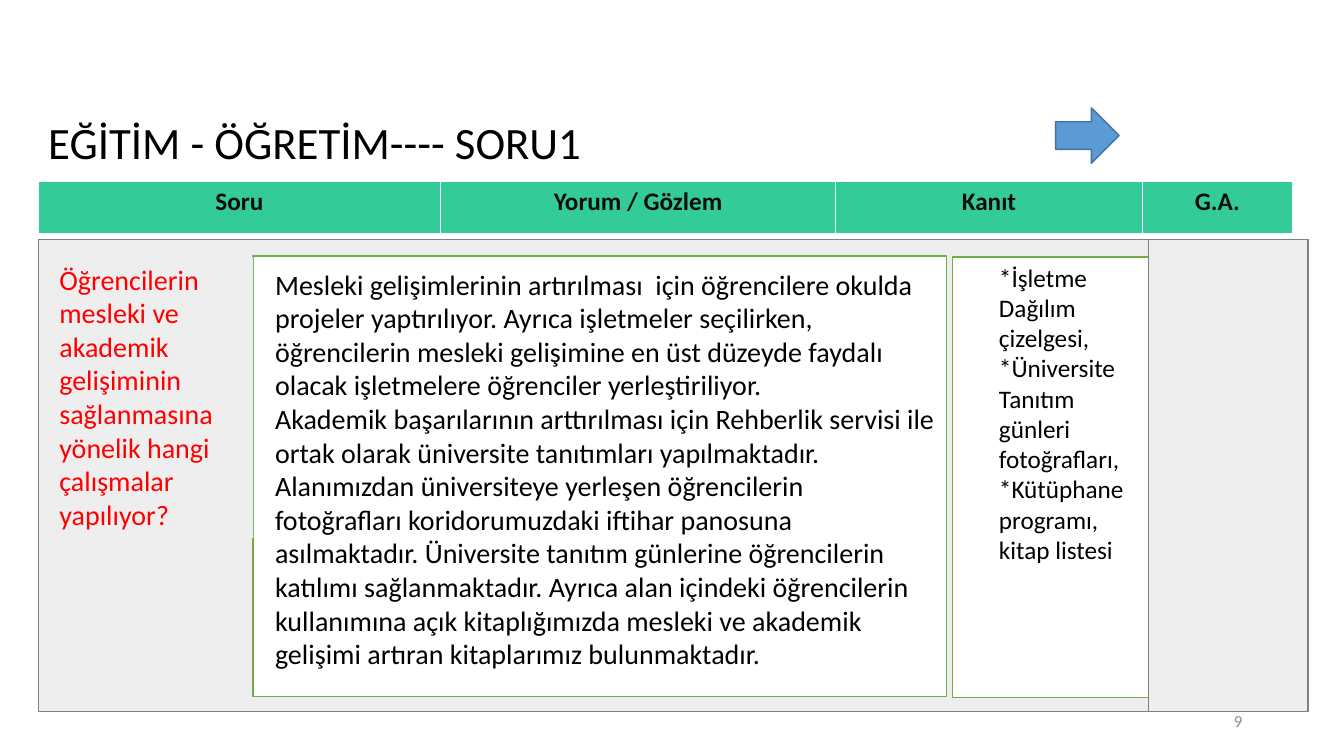
from lxml import etree
from pptx import Presentation
from pptx.dml.color import RGBColor
from pptx.enum.shapes import MSO_SHAPE
from pptx.enum.text import MSO_ANCHOR, PP_ALIGN
from pptx.oxml.ns import qn
from pptx.util import Inches, Pt

RECTANGLE, ARROW = MSO_SHAPE.RECTANGLE, MSO_SHAPE.RIGHT_ARROW
TOP, MIDDLE = MSO_ANCHOR.TOP, MSO_ANCHOR.MIDDLE
LEFT, CENTER, RIGHT = PP_ALIGN.LEFT, PP_ALIGN.CENTER, PP_ALIGN.RIGHT

FONT = "Calibri"
BLACK, WHITE, RED = "000000", "FFFFFF", "FF0000"
PANEL, GRAY, GREEN = "EEEEEE", "808080", "70AD47"


def rgb(value):
    return RGBColor.from_string(value)


class SlideBuilder:
    def __init__(self, slide, font):
        self.slide = slide
        self.font = font

    def fill_text(self, frame, paragraphs, size, color, align=LEFT, bold=False,
                  spacing=None):
        frame.text = "\n".join(paragraphs)
        for paragraph in frame.paragraphs:
            paragraph.alignment = align
            if spacing:
                paragraph.line_spacing = spacing
            for run in paragraph.runs:
                run.font.name = self.font
                run.font.size = Pt(size)
                run.font.bold = bold
                run.font.color.rgb = rgb(color)

    def shape(self, box, fill, line=None, width=1, kind=RECTANGLE):
        shape = self.slide.shapes.add_shape(kind, *map(Inches, box))
        shape.shadow.inherit = False
        shape.fill.solid()
        shape.fill.fore_color.rgb = rgb(fill)
        if line:
            shape.line.color.rgb = rgb(line)
            shape.line.width = Pt(width)
        else:
            shape.line.fill.background()

    def text(self, box, paragraphs, size, color, anchor=TOP, fill=None, **style):
        text_box = self.slide.shapes.add_textbox(*map(Inches, box))
        if fill:
            text_box.fill.solid()
            text_box.fill.fore_color.rgb = rgb(fill)
        frame = text_box.text_frame
        frame.word_wrap = True
        frame.vertical_anchor = anchor
        self.fill_text(frame, paragraphs, size, color, **style)

    def border(self, side, width, color):
        line = etree.Element(qn("a:ln" + side), w=str(Pt(width)))
        fill = etree.SubElement(line, qn("a:solidFill"))
        etree.SubElement(fill, qn("a:srgbClr"), val=color)
        return line

    def header_table(self, box, labels, widths, fill, color, size):
        table = self.slide.shapes.add_table(
            1, len(labels), *map(Inches, box)).table
        for index, (label, width) in enumerate(zip(labels, widths)):
            table.columns[index].width = Inches(width)
            cell = table.cell(0, index)
            cell.fill.solid()
            cell.fill.fore_color.rgb = rgb(fill)
            self.fill_text(cell.text_frame, [label], size, color, CENTER, True)
            properties = cell._tc.get_or_add_tcPr()
            for position, side in enumerate("LRTB"):
                line = self.border(side, 3 if side == "B" else 1, WHITE)
                properties.insert(position, line)


def main():
    presentation = Presentation()
    presentation.slide_width = Inches(13.33)
    presentation.slide_height = Inches(7.5)
    slide = presentation.slides.add_slide(presentation.slide_layouts[6])
    builder = SlideBuilder(slide, FONT)

    # Background panel and observation frame
    builder.shape((0.38, 2.38, 12.6, 4.68), PANEL, GRAY, 0.75)
    builder.shape((2.51, 2.54, 6.88, 4.37), WHITE, GREEN)

    # Title and page number
    builder.text((0.38, 1.15, 9.93, 0.57), ["EĞİTİM - ÖĞRETİM---- SORU1"],
                 32, BLACK, MIDDLE, spacing=0.9)
    builder.text((9.42, 6.95, 3, 0.4), ["9"], 12, "8C8C8C", MIDDLE, align=RIGHT)

    # Column headings
    builder.header_table((0.38, 1.8, 12.44, 0.53),
                         ["Soru", "Yorum / Gözlem", "Kanıt", "G.A."],
                         [3.99, 3.92, 3.04, 1.49], "33CC99", "0D0D0D", 18)

    # Question
    builder.text((0.49, 2.55, 2.02, 2.79), [
        "Öğrencilerin mesleki ve akademik gelişiminin sağlanmasına yönelik "
        "hangi çalışmalar yapılıyor?"], 20, RED, fill=PANEL)

    # Observation
    builder.text((2.63, 2.6, 6.76, 4.14), [
        "Mesleki gelişimlerinin artırılması  için öğrencilere okulda projeler "
        "yaptırılıyor. Ayrıca işletmeler seçilirken, öğrencilerin mesleki "
        "gelişimine en üst düzeyde faydalı olacak işletmelere öğrenciler "
        "yerleştiriliyor.",
        "Akademik başarılarının arttırılması için Rehberlik servisi ile ortak "
        "olarak üniversite tanıtımları yapılmaktadır. Alanımızdan üniversiteye "
        "yerleşen öğrencilerin fotoğrafları koridorumuzdaki iftihar panosuna "
        "asılmaktadır. Üniversite tanıtım günlerine öğrencilerin katılımı "
        "sağlanmaktadır. Ayrıca alan içindeki öğrencilerin kullanımına açık "
        "kitaplığımızda mesleki ve akademik gelişimi artıran kitaplarımız "
        "bulunmaktadır."], 20, BLACK)

    # Evidence
    builder.shape((9.45, 2.55, 1.95, 4.37), WHITE, GREEN)
    builder.text((9.81, 2.55, 1.64, 3.13), [
        "*İşletme Dağılım çizelgesi,",
        "*Üniversite Tanıtım günleri fotoğrafları,",
        "*Kütüphane programı,",
        "kitap listesi"], 18, BLACK)

    # Empty G.A. column and arrow
    builder.shape((11.39, 2.38, 1.58, 4.68), PANEL, GRAY, 0.75)
    builder.shape((10.47, 1.07, 0.63, 0.55), "5B9BD5", "43739E", kind=ARROW)

    presentation.save("out.pptx")


if __name__ == "__main__":
    main()
